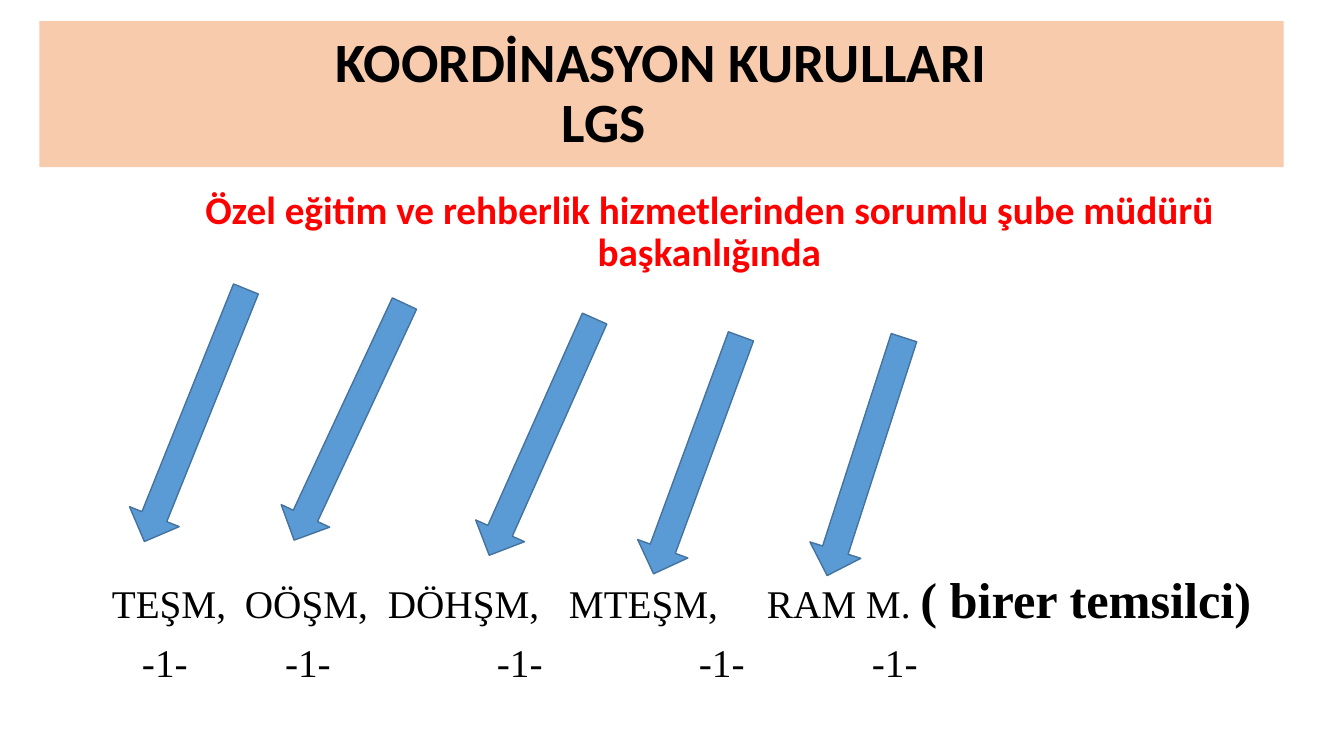
from dataclasses import dataclass

from lxml.etree import SubElement
from pptx import Presentation
from pptx.dml.color import RGBColor
from pptx.enum.shapes import MSO_SHAPE
from pptx.enum.text import MSO_ANCHOR, PP_ALIGN
from pptx.oxml.ns import qn
from pptx.util import Inches, Pt


@dataclass(frozen=True)
class Theme:
    banner: str = "F8CBAD"
    arrow: str = "5B9BD5"
    outline: str = "43739E"
    ink: str = "000000"
    accent: str = "FF0000"
    heading: str = "Calibri"
    serif: str = "Times New Roman"
    title_size: float = 39.6
    emphasis_size: int = 36
    text_size: int = 28


class Board:
    """Draws on one slide, with every length in percent of its width or height."""

    def __init__(self, deck, theme):
        self.theme = theme
        self.width, self.height = deck.slide_width, deck.slide_height
        self.slide = deck.slides.add_slide(deck.slide_layouts[6])

    def across(self, share):
        return round(self.width * share / 100)

    def down(self, share):
        return round(self.height * share / 100)

    def place(self, left, top, width, height):
        return self.across(left), self.down(top), self.across(width), self.down(height)

    def shape(self, kind, area, fill):
        drawn = self.slide.shapes.add_shape(kind, *self.place(*area))
        drawn.shadow.inherit = False
        drawn.fill.solid()
        drawn.fill.fore_color.rgb = RGBColor.from_string(fill)
        drawn.line.fill.background()
        return drawn

    def banner(self, area):
        return self.shape(MSO_SHAPE.RECTANGLE, area, self.theme.banner).text_frame

    def textbox(self, area):
        return self.slide.shapes.add_textbox(*self.place(*area)).text_frame

    def arrow(self, center_x, center_y, length, tilt, breadth=3.98):
        area = center_x - breadth / 2, center_y - length / 2, breadth, length
        pointer = self.shape(MSO_SHAPE.DOWN_ARROW, area, self.theme.arrow)
        pointer.rotation = tilt
        pointer.line.color.rgb = RGBColor.from_string(self.theme.outline)
        pointer.line.width = Pt(1)

    def add_lines(self, frame, lines, anchor=MSO_ANCHOR.TOP, align=PP_ALIGN.LEFT, before=0, stop="l"):
        frame.word_wrap = True
        frame.vertical_anchor = anchor
        frame.margin_left = frame.margin_right = 0
        for order, (stops, runs) in enumerate(lines):
            line = frame.paragraphs[0] if order == 0 else frame.add_paragraph()
            line.alignment = align
            line.line_spacing = 0.9
            line.space_before = Pt(before)
            if stops:
                tabs = SubElement(line._p.get_or_add_pPr(), qn("a:tabLst"))
                for share in stops:
                    SubElement(tabs, qn("a:tab"), pos=str(self.across(share)), algn=stop)
            for words, face, size, color, bold in runs:
                run = line.add_run()
                run.text = words
                run.font.name = face
                run.font.size = Pt(size)
                run.font.bold = bold
                run.font.color.rgb = RGBColor.from_string(color)


def main():
    deck = Presentation()
    deck.slide_width, deck.slide_height = Inches(13.33), Inches(7.5)
    theme = Theme()
    board = Board(deck, theme)

    heading = (theme.heading, theme.title_size, theme.ink, True)
    board.add_lines(
        board.banner((2.93, 2.8, 92.57, 19.33)),
        [
            ([46.28], [("\tKOORDİNASYON KURULLARI", *heading)]),
            ([42], [("\tLGS", *heading)]),
        ],
        anchor=MSO_ANCHOR.MIDDLE,
        stop="ctr",
    )

    chair = "Özel eğitim ve rehberlik hizmetlerinden sorumlu şube müdürü başkanlığında"
    board.add_lines(
        board.textbox((7.65, 24.53, 90.25, 13)),
        [([], [(chair, theme.heading, theme.text_size, theme.accent, True)])],
        align=PP_ALIGN.CENTER,
    )

    schools = ["TEŞM,", "OÖŞM,", "DÖHŞM,", "MTEŞM,", "RAM M. "]
    seats = ["-1-"] * len(schools)
    plain = (theme.serif, theme.text_size, theme.ink, False)
    strong = (theme.serif, theme.emphasis_size, theme.ink, True)
    board.add_lines(
        board.textbox((8.33, 75.4, 90, 16)),
        [
            (
                [9.9, 20.54, 34.01, 48.74],
                [("\t".join(schools), *plain), ("( birer temsilci)", *strong)],
            ),
            (
                [2.24, 12.88, 28.65, 43.68, 56.55],
                [("\t" + "\t".join(seats), *plain)],
            ),
        ],
        before=10,
    )

    for center_x, center_y, length, tilt in [
        (14.52, 54.93, 36, 21.9),
        (25.99, 55.8, 34.53, 25),
        (40.32, 57.8, 34.27, 24),
        (51.88, 60.2, 33.47, 20.2),
        (64.4, 60.4, 33.07, 17.9),
    ]:
        board.arrow(center_x, center_y, length, tilt)

    deck.save("out.pptx")


if __name__ == "__main__":
    main()
